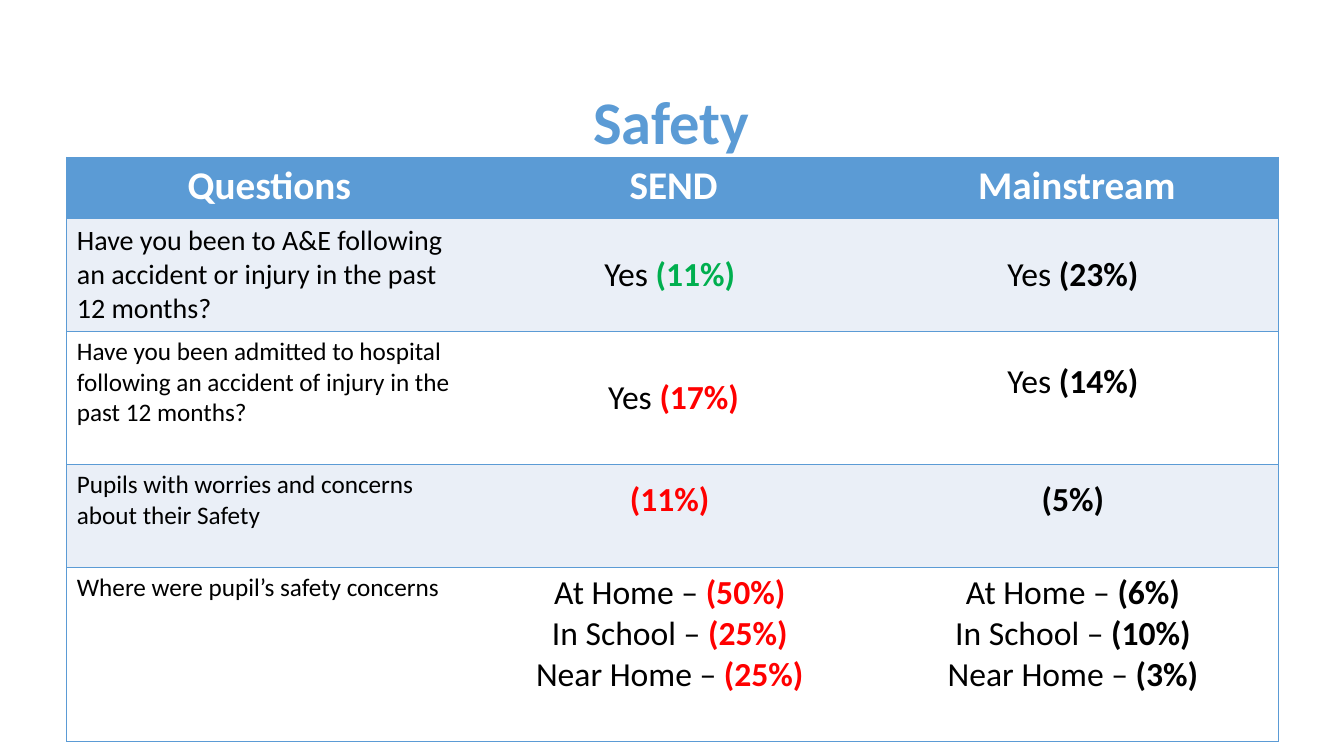
from dataclasses import dataclass

from lxml.etree import SubElement
from pptx import Presentation
from pptx.dml.color import RGBColor
from pptx.enum.text import MSO_ANCHOR, PP_ALIGN
from pptx.oxml.ns import qn
from pptx.slide import Slide
from pptx.table import Table, _Cell
from pptx.text.text import _Paragraph, _Run
from pptx.util import Pt

BLUE = RGBColor(0x5B, 0x9B, 0xD5)
PALE = RGBColor(0xEA, 0xEF, 0xF7)
WHITE = RGBColor(0xFF, 0xFF, 0xFF)
BLACK = RGBColor(0, 0, 0)
GREEN = RGBColor(0, 0xAF, 0x4F)
RED = RGBColor(0xFF, 0, 0)

FONT = "Calibri"
WIDTHS = (289.4, 288, 288)
HEADS = ("Questions", "SEND", "Mainstream")
HEAD_HEIGHT = 43.5
MARGIN = 3.6


@dataclass(frozen=True)
class Answer:
    lines: tuple[tuple[str, str], ...]
    color: RGBColor = BLACK
    lift: float = 0


@dataclass(frozen=True)
class Entry:
    question: str
    size: float
    height: float
    anchor: MSO_ANCHOR
    answers: tuple[Answer, Answer]


ENTRIES = (
    Entry("Have you been to A&E following an accident or injury in the past 12 months?",
          20, 80.7, MSO_ANCHOR.MIDDLE,
          (Answer((("Yes ", "(11%) "),), GREEN),
           Answer((("Yes ", "(23%) "),)))),
    Entry("Have you been admitted to hospital following an accident of injury in the "
          "past 12 months?",
          18, 95, MSO_ANCHOR.MIDDLE,
          (Answer((("Yes ", "(17%)"),), RED),
           Answer((("Yes ", "(14%) "),), lift=22))),
    Entry("Pupils with worries and concerns about their Safety",
          18, 73.6, MSO_ANCHOR.MIDDLE,
          (Answer((("", "(11%) "),), RED, 22),
           Answer((("", "(5%) "),), lift=22))),
    Entry("Where were pupil’s safety concerns",
          18, 124.3, MSO_ANCHOR.TOP,
          (Answer((("At Home – ", "(50%) "), ("In School – ", "(25%) "),
                   ("Near Home – ", "(25%) ")), RED),
           Answer((("At Home – ", "(6%) "), ("In School – ", "(10%) "),
                   ("Near Home – ", "(3%) "))))),
)


def style(run: _Run, size: float, color: RGBColor, bold: bool) -> None:
    run.font.name = FONT
    run.font.size = Pt(size)
    run.font.bold = bold
    run.font.color.rgb = color


def write(para: _Paragraph, text: str, size: float, color: RGBColor,
          bold: bool, align: PP_ALIGN) -> None:
    para.text = text
    para.alignment = align
    for run in para.runs:
        style(run, size, color, bold)


def paint(cell: _Cell, color: RGBColor, col: int) -> None:
    props = cell._tc.get_or_add_tcPr()
    shown = {"L": col == 0, "R": col == len(WIDTHS) - 1, "T": True, "B": True}
    for side, solid in shown.items():
        line = SubElement(props, qn(f"a:ln{side}"), w=str(Pt(1)))
        if solid:
            fill = SubElement(line, qn("a:solidFill"))
            SubElement(fill, qn("a:srgbClr"), val=str(BLUE))
        else:
            SubElement(line, qn("a:noFill"))
    cell.fill.solid()
    cell.fill.fore_color.rgb = color


def draw_answer(cell: _Cell, answer: Answer, anchor: MSO_ANCHOR) -> None:
    cell.vertical_anchor = anchor
    cell.margin_bottom = Pt(MARGIN + answer.lift)
    frame = cell.text_frame
    frame.text = "\n".join(label for label, _ in answer.lines)
    for para, (label, value) in zip(frame.paragraphs, answer.lines):
        write(para, label, 24, BLACK, False, PP_ALIGN.CENTER)
        run = para.add_run()
        run.text = value
        style(run, 24, answer.color, True)


def draw_entry(table: Table, row: int, entry: Entry) -> None:
    table.rows[row].height = Pt(entry.height)
    for col in range(len(WIDTHS)):
        paint(table.cell(row, col), PALE if row % 2 else WHITE, col)
    cell = table.cell(row, 0)
    cell.vertical_anchor = MSO_ANCHOR.MIDDLE if row == 1 else MSO_ANCHOR.TOP
    write(cell.text_frame.paragraphs[0], entry.question, entry.size, BLACK,
          False, PP_ALIGN.LEFT)
    for col, answer in enumerate(entry.answers, 1):
        draw_answer(table.cell(row, col), answer, entry.anchor)


def draw_table(slide: Slide) -> None:
    height = HEAD_HEIGHT + sum(entry.height for entry in ENTRIES)
    table = slide.shapes.add_table(
        len(ENTRIES) + 1, len(WIDTHS), Pt(47.7), Pt(112.5),
        Pt(sum(WIDTHS)), Pt(height)).table
    table.rows[0].height = Pt(HEAD_HEIGHT)
    for col, (width, head) in enumerate(zip(WIDTHS, HEADS)):
        table.columns[col].width = Pt(width)
        cell = table.cell(0, col)
        paint(cell, BLUE, col)
        write(cell.text_frame.paragraphs[0], head, 28, WHITE, True, PP_ALIGN.CENTER)
    for row, entry in enumerate(ENTRIES, 1):
        draw_entry(table, row, entry)


def draw_title(slide: Slide) -> None:
    frame = slide.shapes.add_textbox(Pt(18), Pt(64.8), Pt(923), Pt(48.2)).text_frame
    frame.word_wrap = True
    frame.vertical_anchor = MSO_ANCHOR.MIDDLE
    para = frame.paragraphs[0]
    write(para, "Safety", 43.2, BLUE, True, PP_ALIGN.CENTER)
    para.line_spacing = 0.9


def main() -> None:
    deck = Presentation()
    deck.slide_width = Pt(960)
    deck.slide_height = Pt(540)
    slide = deck.slides.add_slide(deck.slide_layouts[6])
    draw_title(slide)
    draw_table(slide)
    deck.save("out.pptx")


if __name__ == "__main__":
    main()
